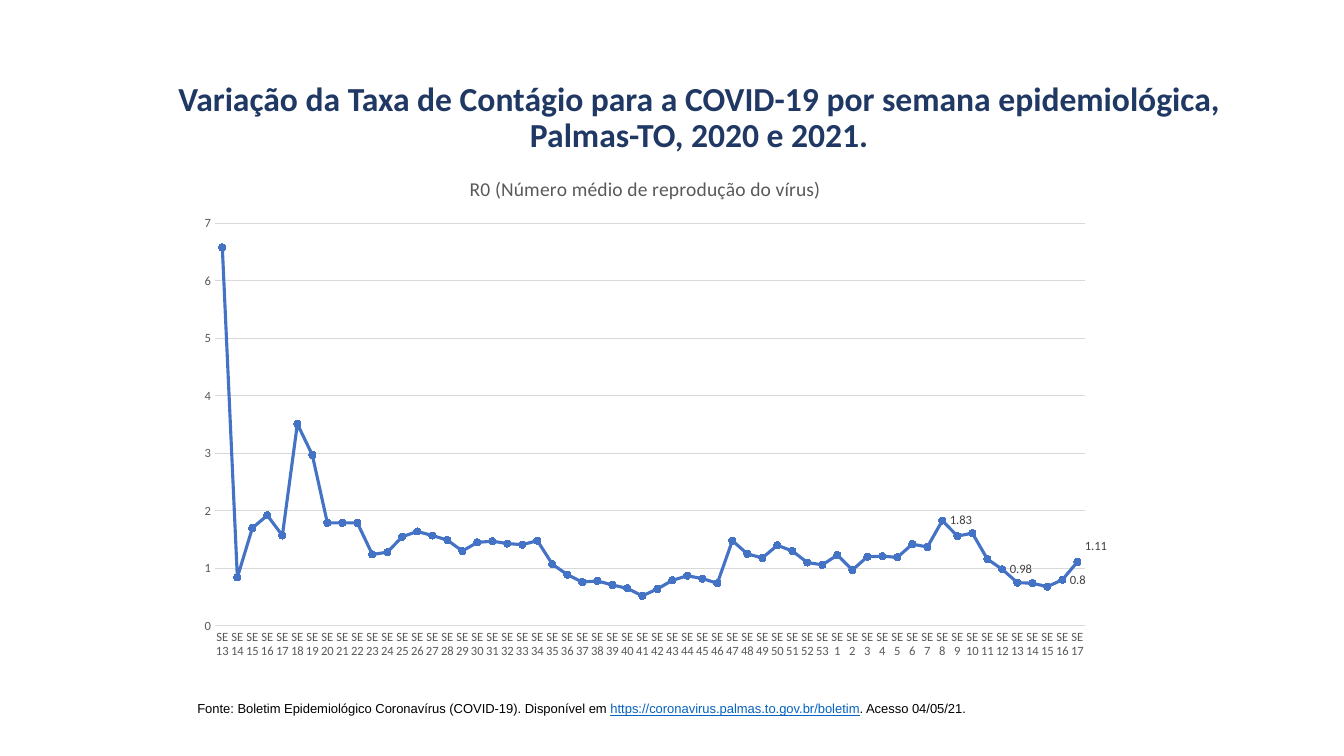
from typing import NamedTuple

from pptx import Presentation
from pptx.chart.data import CategoryChartData as ChartData
from pptx.dml.color import RGBColor
from pptx.enum.chart import XL_CHART_TYPE as Kind
from pptx.enum.chart import XL_LABEL_POSITION as Place
from pptx.enum.chart import XL_MARKER_STYLE as Marker
from pptx.enum.chart import XL_TICK_MARK as Tick
from pptx.enum.text import MSO_ANCHOR as Anchor
from pptx.enum.text import PP_ALIGN as Align
from pptx.oxml import parse_xml
from pptx.oxml.ns import nsdecls
from pptx.util import Inches, Pt


class Piece(NamedTuple):
    text: str
    color: str
    under: bool = False


NAVY, BLUE, GRAY, RULE = "203864", "4472C4", "595959", "D9D9D9"
HEAD = ("Variação da Taxa de Contágio para a COVID-19 por semana "
        "epidemiológica, Palmas-TO, 2020 e 2021.")
NAME = "R0 (Número médio de reprodução do vírus)"
WEEKS = [f"SE {n}" for n in [*range(13, 54), *range(1, 18)]]
RATES = [
    6.58, 0.84, 1.7, 1.92, 1.57, 3.51, 2.97, 1.79, 1.79, 1.79, 1.24, 1.28,
    1.55, 1.64, 1.57, 1.49, 1.3, 1.45, 1.47, 1.43, 1.41, 1.48, 1.07, 0.89,
    0.76, 0.78, 0.71, 0.65, 0.52, 0.64, 0.79, 0.87, 0.82, 0.74, 1.48, 1.25,
    1.18, 1.4, 1.3, 1.1, 1.06, 1.23, 0.97, 1.2, 1.21, 1.19, 1.42, 1.37,
    1.83, 1.56, 1.61, 1.16, 0.98, 0.75, 0.74, 0.68, 0.8, 1.11,
]
MARKED = [48, 52, 56, 57]
SOURCE = [
    Piece("Fonte: Boletim Epidemiológico Coronavírus (COVID-19). "
          "Disponível em ", "000000"),
    Piece("https://coronavirus.palmas.to.gov.br/boletim", "0563C1", True),
    Piece(". Acesso 04/05/21.", "000000"),
]


def rgb(code: str) -> RGBColor:
    return RGBColor.from_string(code)


def style(font, size: float, color: str, face: str = "Calibri",
          bold: bool = False) -> None:
    font.name, font.size, font.bold = face, Pt(size), bold
    font.color.rgb = rgb(color)


def stroke(line, color: str, width: float) -> None:
    line.color.rgb = rgb(color)
    line.width = Pt(width)


def layout(parent, index: int, **parts: str | float) -> None:
    """Give a chart part a manual layout."""
    for old in parent.xpath("./c:layout"):
        parent.remove(old)
    body = "".join(f'<c:{key} val="{val}"/>' for key, val in parts.items())
    parent.insert(index, parse_xml(
        f'<c:layout {nsdecls("c")}><c:manualLayout>{body}'
        "</c:manualLayout></c:layout>"))


def add_title(slide) -> None:
    title = slide.shapes.title
    title.left, title.top = Inches(1.39), Inches(0.73)
    title.width, title.height = Inches(11.1), Inches(1.25)
    frame = title.text_frame
    frame.text = HEAD
    frame.word_wrap = True
    frame.vertical_anchor = Anchor.MIDDLE
    frame.margin_bottom = Inches(0.41)
    para = frame.paragraphs[0]
    para.alignment, para.line_spacing = Align.CENTER, 0.9
    style(para.font, 24, NAVY, bold=True)


def add_graph(slide) -> None:
    data = ChartData()
    data.categories = WEEKS
    data.add_series(NAME, RATES)
    chart = slide.shapes.add_chart(
        Kind.LINE_MARKERS_STACKED, Inches(1.86), Inches(1.55),
        Inches(9.13), Inches(5.12), data).chart
    style(chart.font, 10, "000000")
    chart.has_legend = False
    chart.has_title = True
    frame = chart.chart_title.text_frame
    frame.text = NAME
    style(frame.paragraphs[0].font, 14, GRAY)

    # Axes
    weeks, rates = chart.category_axis, chart.value_axis
    for axis in (weeks, rates):
        axis.major_tick_mark = axis.minor_tick_mark = Tick.NONE
        style(axis.tick_labels.font, 9, GRAY)
    stroke(weeks.format.line, RULE, 0.75)
    rates.format.line.fill.background()
    stroke(rates.major_gridlines.format.line, RULE, 0.75)
    rates.minimum_scale, rates.maximum_scale, rates.major_unit = 0, 7, 1
    layout(chart.element.xpath(".//c:plotArea")[0], 0, layoutTarget="inner",
           xMode="edge", yMode="edge", x=0.03, y=0.13, w=0.95, h=0.78)

    # Line and markers
    plot = chart.plots[0]
    plot.vary_by_categories = False
    curve = plot.series[0]
    curve.smooth = False
    stroke(curve.format.line, BLUE, 2.25)
    dot = curve.marker
    dot.style, dot.size = Marker.CIRCLE, 5
    dot.format.fill.solid()
    dot.format.fill.fore_color.rgb = rgb(BLUE)
    stroke(dot.format.line, BLUE, 0.75)

    # Value labels, the last one raised
    curve.data_labels.show_value = False
    for index in MARKED:
        label = curve.points[index].data_label
        style(label.font, 9, "404040")
        label.position = Place.RIGHT
    layout(chart.element.xpath(".//c:dLbl")[-1], 1, x=0, y=-0.03)


def add_source(slide) -> None:
    box = slide.shapes.add_textbox(
        Inches(1.86), Inches(6.9), Inches(9.45), Inches(0.26))
    frame = box.text_frame
    frame.word_wrap = True
    para = frame.paragraphs[0]
    para.font.name, para.font.size = "Arial", Pt(9.3)
    for piece in SOURCE:
        run = para.add_run()
        run.text = piece.text
        run.font.color.rgb = rgb(piece.color)
        run.font.underline = piece.under


def main() -> None:
    deck = Presentation()
    deck.slide_width, deck.slide_height = Inches(13.34), Inches(7.5)
    slide = deck.slides.add_slide(deck.slide_layouts[5])
    add_title(slide)
    add_graph(slide)
    add_source(slide)
    deck.save("out.pptx")


if __name__ == "__main__":
    main()
